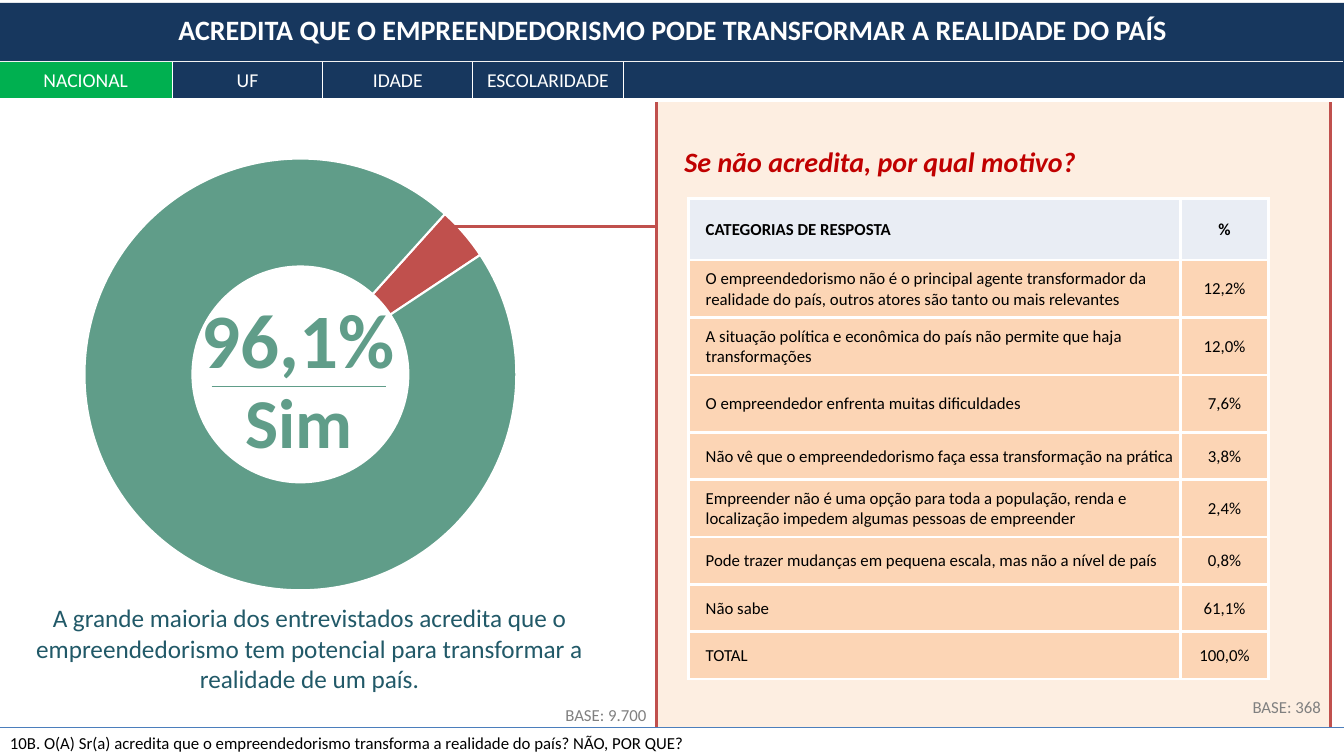
"""Builds the slide on belief in entrepreneurship as a force for change."""
import pptx
import pptx.chart.data
import pptx.dml.color
import pptx.enum.chart
import pptx.enum.shapes
import pptx.enum.text
import pptx.oxml
import pptx.oxml.ns
import pptx.util

HUES = {
    "navy": "17375E", "green": "00B050", "white": "FFFFFF", "pale": "F2F2F2",
    "cream": "FDEADA", "red": "C0504D", "dark": "C00000", "sage": "609D89",
    "teal": "215968", "gray": "808080", "black": "000000", "blue": "4B7EBC",
    "head": "E9EDF4", "peach": "FCD5B5",
}
FONT = "Calibri"
TABS = ["NACIONAL", "UF", "IDADE", "ESCOLARIDADE"]
TAB_TOP, TAB_HIGH, TAB_WIDE, TAB_EDGE = 0.61, 0.37, 1.49, 1.71
PANEL = (6.51, 0.88, 6.69, 6.41)
FOOT = (0, 7.22, 13.33, 0.3)
BAR = (-0.01, 0.03, 13.34, 0.97)
QUERY = "10B. O(A) Sr(a) acredita que o empreendedorismo transforma a realidade do país? NÃO, POR QUE?"
TEXTS = [
    ("ACREDITA QUE O EMPREENDEDORISMO PODE TRANSFORMAR A REALIDADE DO PAÍS",
     (0.01, 0.08, 13.33, 0.44), "CENTER", 20, "white", {"bold": True}),
    ("BASE: 9.700", (3.32, 6.94, 3.19, 0.3), "RIGHT", 12, "gray", {}),
    ("A grande maioria dos entrevistados acredita que o empreendedorismo tem "
     "potencial para transformar a realidade de um país.",
     (0.18, 5.93, 5.78, 1.01), "CENTER", 18, "teal", {}),
    ("96,1%", (1.85, 2.84, 2.21, 1.03), "CENTER", 55, "sage", {"bold": True}),
    ("Se não acredita, por qual motivo?", (6.69, 1.38, 6.19, 0.44), "LEFT", 20,
     "dark", {"bold": True, "italic": True}),
    ("Sim", (1.86, 3.71, 2.21, 0.94), "CENTER", 50, "sage", {"bold": True}),
    ("BASE: 368", (11.26, 6.86, 1.94, 0.3), "RIGHT", 12, "gray", {}),
]
RULES = [
    ((0, 7.22, 13.33, 7.22), "blue", 0.75),
    ((-0.03, 0.61, 13.32, 0.61), "pale", 1),
    ((-0.03, 0.99, 13.34, 0.99), "white", 3),
]
MARKS = [
    ((4.46, 2.25, 6.51, 2.25), "red", 2.25),
    ((2.1, 3.83, 3.83, 3.83), "sage", 0.75),
]
RING = (0.6, 1.42, 4.76, 4.59)
SHARES = [("1", 4, "red"), ("2", 96, "sage")]
GRID = (6.83, 1.97)
COLS = [4.88, 0.87]
ROWS = [
    ("CATEGORIAS DE RESPOSTA", "%", 0.61),
    ("O empreendedorismo não é o principal agente transformador da realidade "
     "do país, outros atores são tanto ou mais relevantes", "12,2%", 0.57),
    ("A situação política e econômica do país não permite que haja transformações",
     "12,0%", 0.57),
    ("O empreendedor enfrenta muitas dificuldades", "7,6%", 0.57),
    ("Não vê que o empreendedorismo faça essa transformação na prática", "3,8%", 0.47),
    ("Empreender não é uma opção para toda a população, renda e localização "
     "impedem algumas pessoas de empreender", "2,4%", 0.57),
    ("Pode trazer mudanças em pequena escala, mas não a nível de país", "0,8%", 0.47),
    ("Não sabe", "61,1%", 0.47),
    ("TOTAL", "100,0%", 0.47),
]

Inches, Pt = pptx.util.Inches, pptx.util.Pt
ALIGN, ANCHOR = pptx.enum.text.PP_ALIGN, pptx.enum.text.MSO_ANCHOR
NS = pptx.oxml.ns.nsdecls


def hue(name):
    return pptx.dml.color.RGBColor.from_string(HUES[name])


def paint(fill, name):
    fill.solid()
    fill.fore_color.rgb = hue(name)


def write(frame, text, align, size, name, extra):
    para = frame.paragraphs[0]
    para.alignment = ALIGN[align]
    run = para.add_run()
    run.text = text
    look = {"name": FONT, "size": Pt(size), "bold": False, **extra}
    for key, value in look.items():
        setattr(run.font, key, value)
    run.font.color.rgb = hue(name)


def add_box(slide, place, name):
    kind = pptx.enum.shapes.MSO_SHAPE.RECTANGLE
    box = slide.shapes.add_shape(kind, *map(Inches, place))
    box.shadow.inherit = False
    paint(box.fill, name)
    box.line.fill.background()
    return box


def grow(frame):
    frame.word_wrap = True
    frame.auto_size = pptx.enum.text.MSO_AUTO_SIZE.SHAPE_TO_FIT_TEXT


def add_rule(slide, ends, name, width):
    kind = pptx.enum.shapes.MSO_CONNECTOR.STRAIGHT
    rule = slide.shapes.add_connector(kind, *map(Inches, ends))
    rule.line.color.rgb = hue(name)
    rule.line.width = Pt(width)
    rule._element.spPr.append(pptx.oxml.parse_xml(f"<a:effectLst {NS('a')}/>"))


def add_ring(slide):
    data = pptx.chart.data.CategoryChartData()
    data.categories = [label for label, _, _ in SHARES]
    data.add_series("Series 1", [value for _, value, _ in SHARES])
    kind = pptx.enum.chart.XL_CHART_TYPE.DOUGHNUT
    chart = slide.shapes.add_chart(kind, *map(Inches, RING), data).chart
    chart.has_legend = chart.has_title = False
    chart.font.name, chart.font.size = FONT, Pt(10)
    chart.font.color.rgb = hue("black")
    plot = chart.plots[0]
    plot.vary_by_categories = True
    for at, (_, _, name) in enumerate(SHARES):
        look = plot.series[0].points[at].format
        paint(look.fill, name)
        look.line.color.rgb = hue("white")
        look.line.width = Pt(1.5)
    area = chart._chartSpace.chart.plotArea
    for tag, value in {"firstSliceAng": 42, "holeSize": 67}.items():
        area.find(".//" + pptx.oxml.ns.qn("c:" + tag)).set("val", str(value))
    for old in area.findall(pptx.oxml.ns.qn("c:layout")):
        area.remove(old)
    sides = {"x": 0.05, "y": 0.03, "w": 0.9, "h": 0.94}
    spots = "".join(f'<c:{key} val="{value}"/>' for key, value in sides.items())
    area.insert(0, pptx.oxml.parse_xml(
        f'<c:layout {NS("c")}><c:manualLayout><c:layoutTarget val="inner"/>'
        f'<c:xMode val="edge"/><c:yMode val="edge"/>{spots}</c:manualLayout></c:layout>'))


def add_grid(slide):
    high = sum(row[2] for row in ROWS)
    size = map(Inches, (*GRID, sum(COLS), high))
    table = slide.shapes.add_table(len(ROWS), len(COLS), *size).table
    table.first_row = table.horz_banding = False
    for col, wide in zip(table.columns, COLS):
        col.width = Inches(wide)
    for down, (*words, tall) in enumerate(ROWS):
        table.rows[down].height = Inches(tall)
        for across, text in enumerate(words):
            cell = table.cell(down, across)
            look = {"vertical_anchor": ANCHOR.MIDDLE,
                    "margin_left": Inches(0.01 if across else 0.17),
                    "margin_right": Inches(0.01),
                    "margin_top": Inches(0.01), "margin_bottom": 0}
            for key, value in look.items():
                setattr(cell, key, value)
            paint(cell.fill, "peach" if down else "head")
            align = "CENTER" if across else "LEFT"
            write(cell.text_frame, text, align, 12, "black", {"bold": not down})
            for spot, side in enumerate("LRTB"):
                cell._tc.get_or_add_tcPr().insert(spot, pptx.oxml.parse_xml(
                    f'<a:ln{side} {NS("a")} w="{Pt(2.25)}"><a:solidFill>'
                    f'<a:srgbClr val="{HUES["white"]}"/></a:solidFill></a:ln{side}>'))


def main():
    deck = pptx.Presentation()
    deck.slide_width, deck.slide_height = Inches(13.33), Inches(7.5)
    slide = deck.slides.add_slide(deck.slide_layouts[6])
    panel = add_box(slide, PANEL, "cream")
    panel.line.color.rgb = hue("red")
    panel.line.width = Pt(2)
    tint = panel._element.spPr.find(".//" + pptx.oxml.ns.qn("a:srgbClr"))
    tint.append(pptx.oxml.parse_xml(f'<a:alpha {NS("a")} val="80000"/>'))
    foot = add_box(slide, FOOT, "white").text_frame
    foot.vertical_anchor = ANCHOR.TOP
    grow(foot)
    write(foot, QUERY, "LEFT", 12, "black", {})
    add_box(slide, BAR, "navy")
    edges = [TAB_EDGE + TAB_WIDE * i for i in range(len(TABS))]
    for left, right, text in zip([-0.01] + edges, edges, TABS):
        place = (left, TAB_TOP, right - left, TAB_HIGH)
        tab = add_box(slide, place, "green" if text == TABS[0] else "navy").text_frame
        tab.vertical_anchor = ANCHOR.MIDDLE
        write(tab, text, "CENTER", 14, "white", {})
    for edge in edges:
        add_rule(slide, (edge, TAB_TOP + TAB_HIGH, edge, TAB_TOP), "white", 0.75)
    for rule in RULES:
        add_rule(slide, *rule)
    add_ring(slide)
    for text, place, *look in TEXTS:
        frame = slide.shapes.add_textbox(*map(Inches, place)).text_frame
        grow(frame)
        write(frame, text, *look)
    add_grid(slide)
    for mark in MARKS:
        add_rule(slide, *mark)
    deck.save("out.pptx")


if __name__ == "__main__":
    main()
